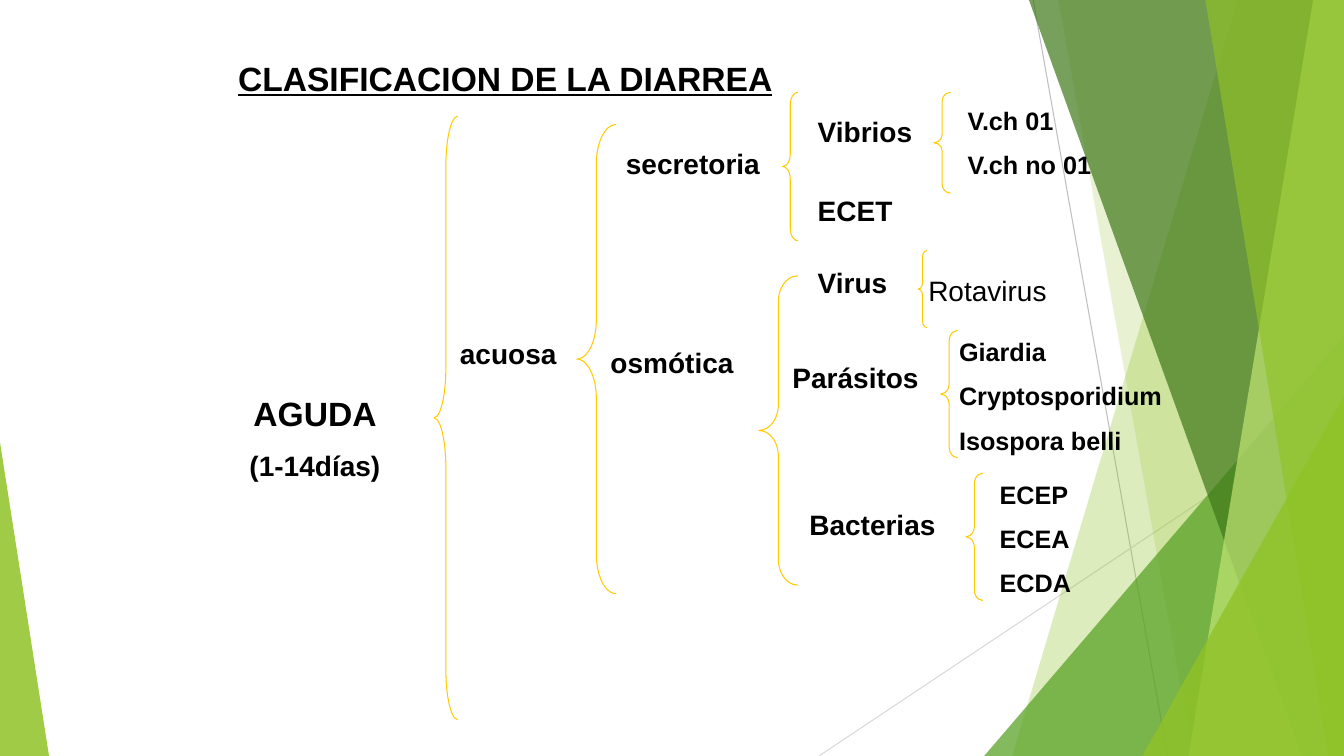
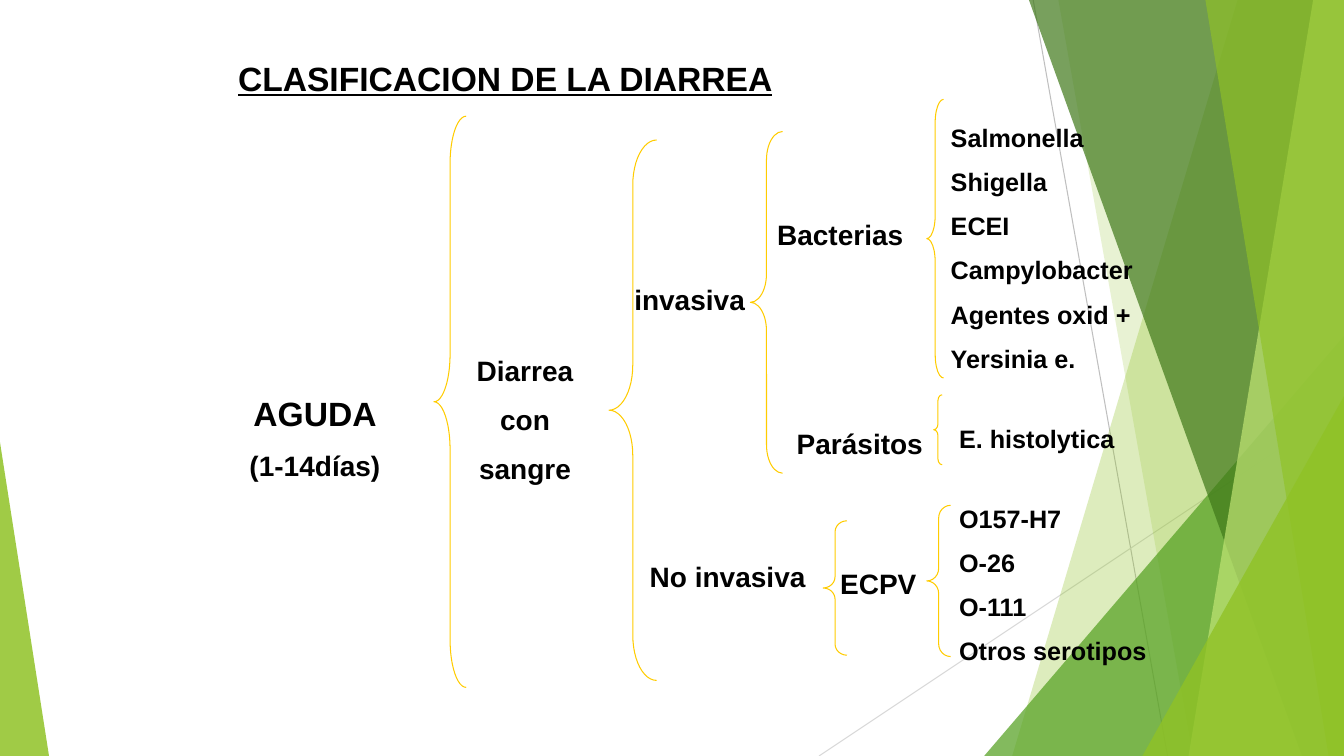
from pptx import Presentation
from pptx.dml.color import RGBColor
from pptx.enum.shapes import MSO_CONNECTOR as Connector, MSO_SHAPE as Shape
from pptx.enum.text import PP_ALIGN as Align
from pptx.oxml.ns import qn
from pptx.util import Pt
from lxml.etree import SubElement

WIDTH, HEIGHT = 960, 540
FONT, BLACK, GOLD = "Arial", "000000", "FFCC00"
GREEN, LEAF, FOREST, LIME = "90C226", "54A021", "3F7819", "C0E474"

TITLE = "CLASIFICACION DE LA DIARREA"
STAGE = [("AGUDA", 24), ("(1-14días)", 20)]

# name: x1, y1, x2, y2, colour
RAYS = [(738, 0, 834, 540, "BFBFBF"), (960, 290, 585, 540, "D9D9D9")]
BACKDROP = [
    ("band", (884, 723), GREEN, 30),
    ("band", (756, 852), GREEN, 20),
    ("right", (703, 240, 257, 300), LEAF, 72),
    ("band", (735, 930), FOREST, 70),
    ("band", (938, 849), LIME, 70),
    ("band", (861, 949), GREEN, 65),
    ("right", (816, 283, 144, 257), GREEN, 80),
    ("left", (0, 316, 35, 224), GREEN, 85),
]

SLIDES = [
    {
        "braces": [
            (310, 83, 17, 431), (412, 89, 28, 335), (559, 66, 11, 106),
            (667, 66, 12, 72), (542, 197, 28, 221), (656, 179, 6, 55),
            (672, 236, 12, 91), (690, 338, 12, 91),
        ],
        "groups": [
            (315, 236, 96, ["acuosa"], {"align": Align.CENTER}),
            (440, 100, 113, ["secretoria"], {}),
            (429, 242, 125, ["osmótica"], {}),
            (577, 77, 96, ["Vibrios"], {}),
            (577, 134, 85, ["ECET"], {}),
            (577, 185, 73, ["Virus"], {}),
            (656, 191, 108, ["Rotavirus"], {"bold": False}),
            (559, 253, 114, ["Parásitos"], {}),
            (571, 358, 119, ["Bacterias"], {}),
        ],
        "agents": [
            (684, 71, 110, ["V.ch 01", "V.ch no 01"]),
            (678, 236, 161, ["Giardia", "Cryptosporidium", "Isospora belli"]),
            (707, 338, 108, ["ECEP", "ECEA", "ECDA"]),
        ],
    },
    {
        "braces": [
            (310, 83, 23, 408), (435, 100, 34, 386), (536, 94, 23, 244),
            (662, 71, 12, 199), (667, 282, 6, 50), (588, 372, 17, 96),
            (662, 361, 17, 108),
        ],
        "groups": [
            (327, 248, 96, ["Diarrea", "con", "sangre"], {"align": Align.CENTER}),
            (446, 197, 113, ["invasiva"], {}),
            (548, 151, 108, ["Bacterias"], {}),
            (562, 300, 130, ["Parásitos"], {}),
            (457, 395, 142, ["No invasiva"], {}),
            (593, 400, 91, ["ECPV"], {}),
        ],
        "agents": [
            (672, 83, 167, ["Salmonella", "Shigella", "ECEI", "Campylobacter",
                            "Agentes oxid +", "Yersinia e."]),
            (678, 298, 136, ["E. histolytica"]),
            (678, 355, 161, ["O157-H7", "O-26", "O-111", "Otros serotipos"]),
        ],
    },
]


def rgb(value):
    """Turn a hex string into a colour."""
    return RGBColor.from_string(value)


def add_text(s, x, y, w, lines, size=20, bold=True, underline=False, align=Align.LEFT):
    """Add a text box; a line is a string or a (string, size) pair."""
    rows = [(line, size) if isinstance(line, str) else line for line in lines]
    h = 8 + sum(1.65 * pts for _, pts in rows) - 0.5 * rows[0][1]
    tf = s.shapes.add_textbox(Pt(x), Pt(y), Pt(w), Pt(round(h))).text_frame
    tf.word_wrap = True
    tf.margin_top = Pt(4.5)
    for i, (text, pts) in enumerate(rows):
        p = tf.add_paragraph() if i else tf.paragraphs[0]
        p.alignment = align
        p.space_before = Pt(0.55 * pts if i else 0)
        r = p.add_run()
        r.text = text
        font = r.font
        font.name, font.size, font.bold, font.underline = FONT, Pt(pts), bold, underline
        font.color.rgb = rgb(BLACK)


def add_brace(s, x, y, w, h):
    """Add a left brace whose arcs each take a twelfth of its height."""
    sp = s.shapes.add_shape(Shape.LEFT_BRACE, Pt(x), Pt(y), Pt(w), Pt(h))
    sp.adjustments[0] = h / (12 * w)
    sp.shadow.inherit = False
    sp.fill.background()
    sp.line.color.rgb = rgb(GOLD)
    sp.line.width = Pt(0.75)


def add_shard(s, kind, place, color, opacity):
    """Add a translucent band that runs to the right edge, or a right triangle."""
    if kind == "band":
        top, bottom = place
        outline = s.shapes.build_freeform(top, 0, scale=Pt(1))
        outline.add_line_segments([(WIDTH, 0), (WIDTH, HEIGHT), (bottom, HEIGHT)])
        sp = outline.convert_to_shape()
    else:
        sp = s.shapes.add_shape(Shape.ISOSCELES_TRIANGLE, *map(Pt, place))
        sp.adjustments[0] = 1 if kind == "right" else 0
    sp.shadow.inherit = False
    sp.line.fill.background()
    sp.fill.solid()
    sp.fill.fore_color.rgb = rgb(color)
    clr = sp.fill._xPr.find(".//" + qn("a:srgbClr"))
    SubElement(clr, qn("a:alpha"), val=str(opacity * 1000))


def add_frame(s):
    """Add the backdrop, title and stage that all slides share."""
    for *ends, color in RAYS:
        ray = s.shapes.add_connector(Connector.STRAIGHT, *map(Pt, ends))
        ray.line.color.rgb = rgb(color)
        ray.line.width = Pt(0.75)
        SubElement(ray._element.spPr, qn("a:effectLst"))
    for shard in BACKDROP:
        add_shard(s, *shard)
    add_text(s, 163, 37, 629, [TITLE], size=24, underline=True)
    add_text(s, 157, 276, 136, STAGE, align=Align.CENTER)


def main():
    """Build and save the deck."""
    prs = Presentation()
    prs.slide_width, prs.slide_height = Pt(WIDTH), Pt(HEIGHT)
    for content in SLIDES:
        s = prs.slides.add_slide(prs.slide_layouts[6])
        add_frame(s)
        for brace in content["braces"]:
            add_brace(s, *brace)
        for *place, style in content["groups"]:
            add_text(s, *place, **style)
        for agents in content["agents"]:
            add_text(s, *agents, size=18)
    prs.save("out.pptx")


if __name__ == "__main__":
    main()
